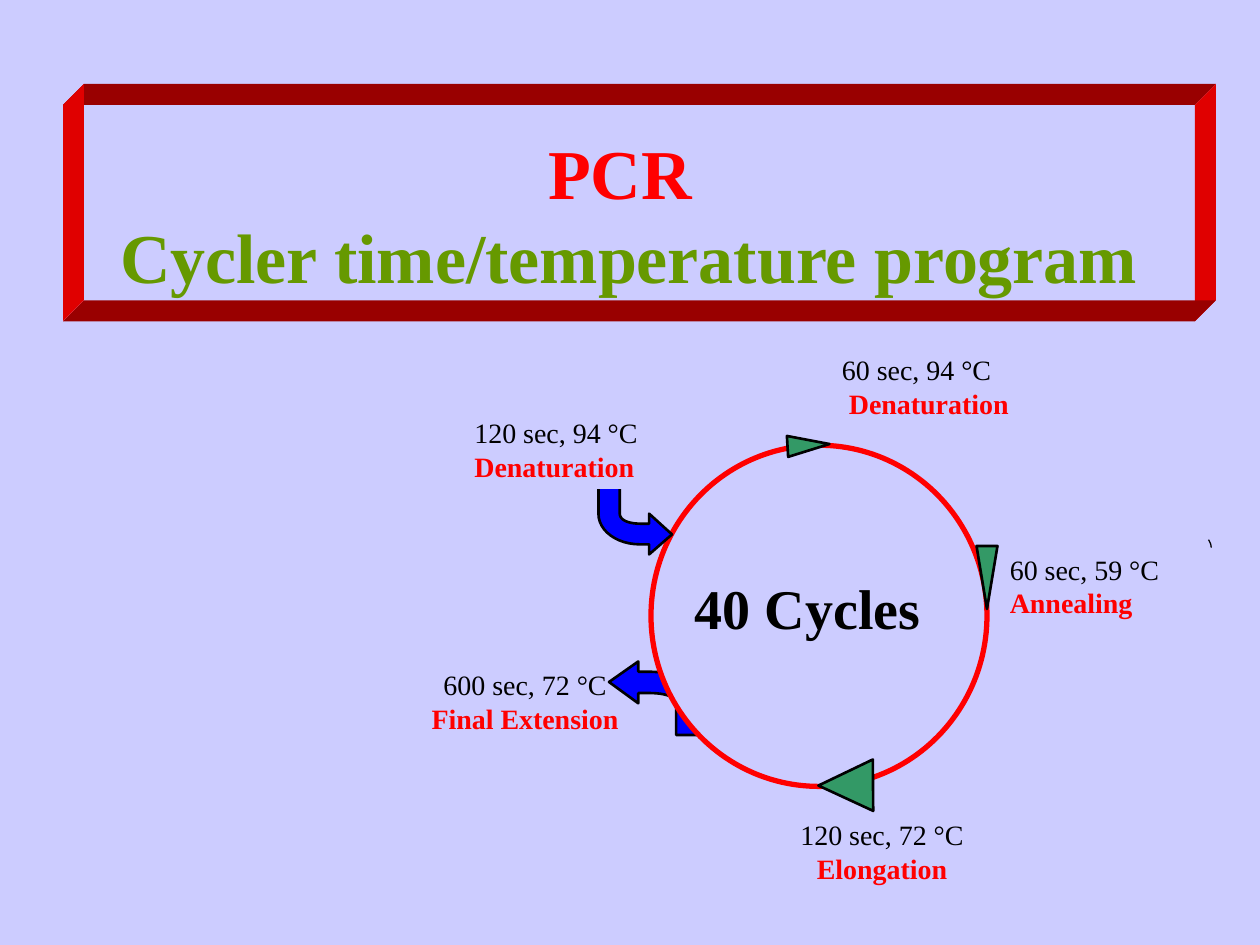
import pptx
import pptx.util
import pptx.dml.color
import pptx.enum.shapes
import pptx.enum.text

KIND = pptx.enum.shapes.MSO_SHAPE
ALIGN = pptx.enum.text.PP_ALIGN
ANCHOR = pptx.enum.text.MSO_ANCHOR

# Content: boxes are left, top, width, height in cells; the slide is 120 x 90 cells
BACK, RED, DARK, BRIGHT = "CCCCFF", "FF0000", "990000", "E00000"
GREEN, BLUE, LEAF, BLACK = "669900", "0000FF", "339966", "000000"
TITLE = ["PCR ", "Cycler time/temperature program"]
FRAME, DEPTH = (6, 10, 107.8, 20.6), 2
CIRCLE = (62, 42.4, 32, 32.5)
CENTRE = ("40 Cycles", (65, 54, 27, 8))
EXIT = ("600 sec, 72 °C", "Final Extension", (34, 63, 32, 8), ALIGN.CENTER)
START = ("60 sec, 94 °C", " Denaturation", (79, 33, 39, 8), ALIGN.LEFT)
STEPS = [
    ("120 sec, 94 °C", "Denaturation", (44, 39, 21, 7.5), ALIGN.LEFT),
    ("60 sec, 59 °C", "Annealing", (95, 52, 17, 9), ALIGN.LEFT),
    ("120 sec, 72 °C", "Elongation", (69, 77.3, 30, 7.3), ALIGN.CENTER),
]
MARKS = [((93, 52, 2, 6), 0), ((78.1, 72.2, 4.9, 5.2), 89.6), ((76, 40.4, 2, 4), 266.7)]
OUT, IN = (58, 63, 9, 7), (57, 46, 7, 6.8)
# Bent arrow in shares of its box: two-number points, six-number curves
ARROW = [(0, .28), (.31, 0), (.31, .14), (.43, .14), (.75, .14, 1, .33, 1, .57), (1, 1),
         (.71, 1), (.71, .57), (.71, .48, .59, .43, .43, .43), (.31, .43), (.31, .57)]
TICK = [(0, 0), (.5, .3, 1, .6, 1, 1)]

deck = pptx.Presentation()
deck.slide_width, deck.slide_height = pptx.util.Inches(10), pptx.util.Inches(7.5)
CELL = deck.slide_width / 120
slide = deck.slides.add_slide(deck.slide_layouts[6])


def tint(code):
    return pptx.dml.color.RGBColor.from_string(code)


def emu(*cells):
    return [round(c * CELL) for c in cells]


def paint(shape, fill=None, line=None, width=1.5):
    shape.shadow.inherit = False
    if fill:
        shape.fill.solid()
        shape.fill.fore_color.rgb = tint(fill)
    else:
        shape.fill.background()
    if line:
        shape.line.color.rgb = tint(line)
        shape.line.width = pptx.util.Pt(width)
    else:
        shape.line.fill.background()
    return shape


def write(lines, box, size=16, align=ALIGN.LEFT, anchor=ANCHOR.TOP, fill=BACK):
    """Each line is (text, colour, bold)."""
    shape = slide.shapes.add_textbox(*emu(*box))
    if fill:
        paint(shape, fill, fill, .75)
    frame = shape.text_frame
    frame.word_wrap = True
    frame.vertical_anchor = anchor
    for i, (text, color, bold) in enumerate(lines):
        para = frame.add_paragraph() if i else frame.paragraphs[0]
        para.alignment = align
        run = para.add_run()
        run.text = text
        run.font.name, run.font.size = "Times New Roman", pptx.util.Pt(size)
        run.font.bold, run.font.color.rgb = bold, tint(color)


def label(time, step, box, align):
    write([(time, BLACK, False), (step, RED, True)], box, align=align)


def outline(points, close=True):
    first, *rest = [emu(*p) for p in points]
    pen = slide.shapes.build_freeform(*first)
    pen.add_line_segments(rest, close=close)
    return pen.convert_to_shape()


def trace(steps, box, turn=False, parts=12):
    """Sample curves and fit the steps to a box, turned half round on request."""
    pts = []
    for step in steps:
        if len(step) == 2:
            pts.append(step)
            continue
        hull = [pts[-1], step[:2], step[2:4], step[4:]]
        for k in range(1, parts + 1):
            t = k / parts
            share = ((1 - t) ** 3, 3 * t * (1 - t) ** 2, 3 * t * t * (1 - t), t ** 3)
            pts.append(tuple(sum(s * p[d] for s, p in zip(share, hull)) for d in (0, 1)))
    x, y, w, h = box
    return [(x + w * (1 - u if turn else u), y + h * (1 - v if turn else v)) for u, v in pts]


# Background and bevelled title frame
slide.background.fill.solid()
slide.background.fill.fore_color.rgb = tint(BACK)
x, y, w, h = FRAME
front = [(x, y), (x + w, y), (x + w, y + h), (x, y + h)]
rear = [(a + DEPTH, b - DEPTH) for a, b in front]
for i, color in enumerate([DARK, BRIGHT, DARK, BRIGHT]):
    j = (i + 1) % 4
    paint(outline([front[i], front[j], rear[j], rear[i]]), color)
write([(text, color, True) for text, color in zip(TITLE, (RED, GREEN))], FRAME, size=40,
      align=ALIGN.CENTER, anchor=ANCHOR.MIDDLE, fill=None)
paint(outline(trace(TICK, (115.1, 51.4, .25, .75)), close=False), None, BLACK, .75)

# Cycle, with the way out running behind it
label(*EXIT)
paint(outline(trace(ARROW, OUT)), BLUE, BLACK)
label(*START)
paint(slide.shapes.add_shape(KIND.OVAL, *emu(*CIRCLE)), BACK, RED, 3)
write([(CENTRE[0], BLACK, True)], CENTRE[1], size=32)
paint(outline(trace(ARROW, IN, turn=True)), BLUE, BLACK)

# Step labels and direction marks
for step in STEPS:
    label(*step)
for box, angle in MARKS:
    mark = paint(slide.shapes.add_shape(KIND.FLOWCHART_MERGE, *emu(*box)), LEAF, BLACK)
    mark.rotation = angle

deck.save("out.pptx")
